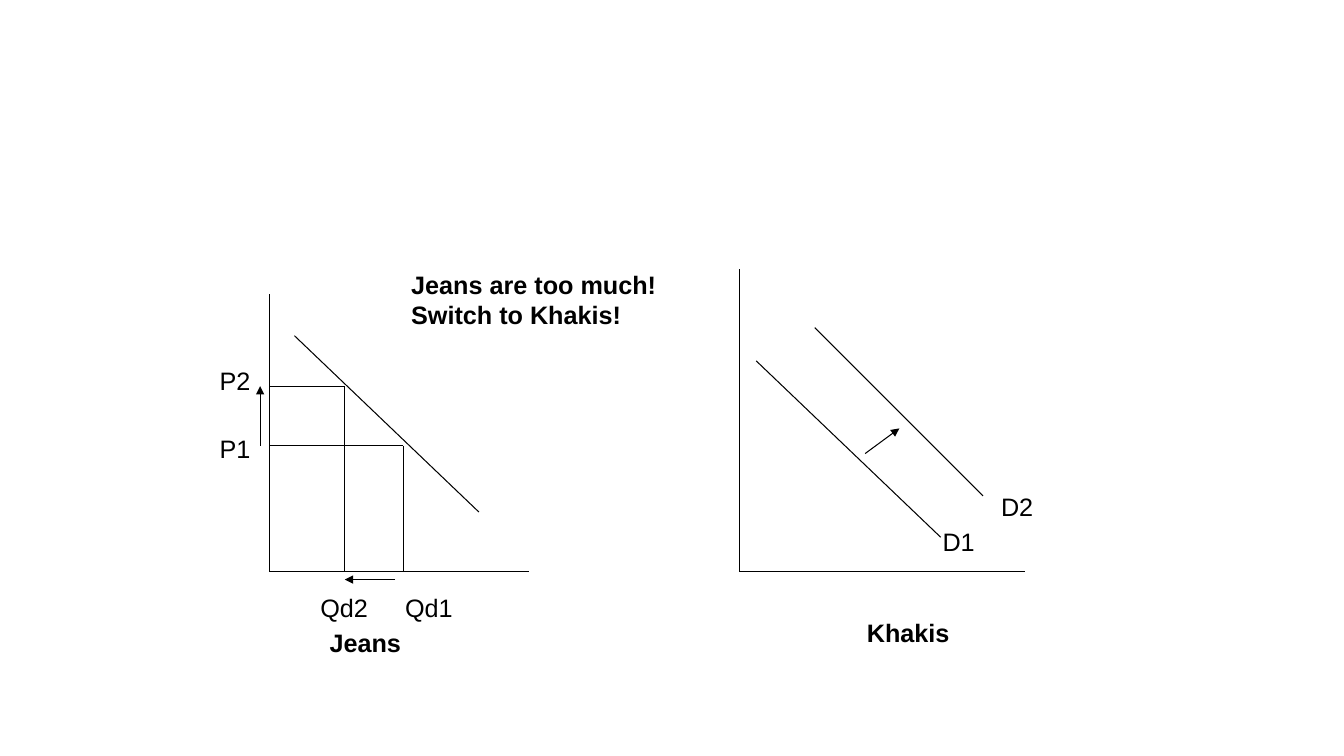
from dataclasses import dataclass

from lxml.etree import SubElement
from pptx import Presentation
from pptx.dml.color import RGBColor
from pptx.enum.shapes import MSO_CONNECTOR as Connector
from pptx.enum.text import MSO_AUTO_SIZE as AutoSize
from pptx.oxml.ns import qn
from pptx.util import Inches, Pt


@dataclass(frozen=True)
class Theme:
    """Colours, type and line sizes of the slide."""
    ink: RGBColor = RGBColor(0, 0, 0)
    paper: RGBColor = RGBColor(255, 255, 255)
    font: str = "Arial"
    text_size: Pt = Pt(18)
    line_width: Pt = Pt(0.75)


@dataclass(frozen=True)
class Box:
    """A region of the slide, in inches."""
    left: float
    top: float
    width: float
    height: float


THEME = Theme()
LABEL_HEIGHT = 0.4


def add_line(slide, box, start, end, arrow=False):
    """Draw a straight line between two points measured from the box corner."""
    line = slide.shapes.add_connector(
        Connector.STRAIGHT,
        Inches(box.left + start[0]), Inches(box.top + start[1]),
        Inches(box.left + end[0]), Inches(box.top + end[1]))
    line.line.color.rgb = THEME.ink
    line.line.width = THEME.line_width
    if arrow:
        SubElement(line.line._get_or_add_ln(), qn("a:tailEnd"), type="triangle")
    SubElement(line._element.spPr, qn("a:effectLst"))


def add_text(slide, box, lines, bold=False, wrap=False):
    """Write one paragraph for each line of text in the box."""
    shape = slide.shapes.add_textbox(
        Inches(box.left), Inches(box.top), Inches(box.width), Inches(box.height))
    frame = shape.text_frame
    frame.text = "\n".join(lines)
    frame.word_wrap = wrap
    frame.auto_size = AutoSize.SHAPE_TO_FIT_TEXT
    for paragraph in frame.paragraphs:
        paragraph.font.name = THEME.font
        paragraph.font.size = THEME.text_size
        paragraph.font.bold = bold
        paragraph.font.color.rgb = THEME.ink


def add_labels(slide, box, labels):
    """Place short labels given as text, offset from the box corner and width."""
    for text, x, y, width in labels:
        add_text(slide, Box(box.left + x, box.top + y, width, LABEL_HEIGHT), [text])


def add_axes(slide, box):
    """Draw the price and quantity axes along the left and bottom of the box."""
    origin = (0, box.height)
    add_line(slide, box, (0, 0), origin)
    add_line(slide, box, origin, (box.width, box.height))


def add_jeans_graph(slide, box):
    """Draw the movement along the jeans demand curve."""
    add_axes(slide, box)
    add_line(slide, box, (0.25, 0.41), (2.08, 2.16))
    quantity_1, price_1 = 1.33, 1.5
    quantity_2, price_2 = 0.75, 0.91
    for quantity, price in ((quantity_2, price_2), (quantity_1, price_1)):
        add_line(slide, box, (0, price), (quantity, price))
        add_line(slide, box, (quantity, price), (quantity, box.height))
    arrow_y = box.height + 0.08
    add_line(slide, box, (quantity_1 - 0.08, arrow_y), (quantity_2, arrow_y), arrow=True)
    add_line(slide, box, (-0.09, price_1), (-0.09, price_2), arrow=True)
    quantity_label_y = box.height + 0.16
    add_labels(slide, box, (
        ("Qd1", 1.25, quantity_label_y, 0.67),
        ("Qd2", 0.41, quantity_label_y, 0.67),
        ("P1", -0.59, 1.33, 0.51),
        ("P2", -0.59, 0.66, 0.51)))
    name_box = Box(box.left + 0.5, box.top + box.height + 0.5, 0.92, LABEL_HEIGHT)
    add_text(slide, name_box, ["Jeans"], bold=True, wrap=True)


def add_khakis_graph(slide, box):
    """Draw the shift of the khakis demand curve."""
    add_axes(slide, box)
    add_line(slide, box, (0.17, 0.91), (2, 2.66))
    add_line(slide, box, (0.75, 0.58), (2.42, 2.25))
    add_line(slide, box, (1.25, 1.83), (1.59, 1.58), arrow=True)
    add_labels(slide, box, (("D1", 1.92, 2.5, 0.52), ("D2", 2.5, 2.16, 0.52)))
    name_box = Box(box.left + 1.17, box.top + box.height + 0.41, 1.03, LABEL_HEIGHT)
    add_text(slide, name_box, ["Khakis"], bold=True)


def main():
    """Build and save the slide."""
    presentation = Presentation()
    presentation.slide_width = Inches(13.33)
    presentation.slide_height = Inches(7.5)
    slide = presentation.slides.add_slide(presentation.slide_layouts[6])
    slide.background.fill.solid()
    slide.background.fill.fore_color.rgb = THEME.paper
    add_jeans_graph(slide, Box(2.67, 2.92, 2.58, 2.75))
    add_khakis_graph(slide, Box(7.33, 2.67, 2.84, 3))
    add_text(slide, Box(3.98, 2.62, 2.66, 0.71),
             ["Jeans are too much!", "Switch to Khakis!"], bold=True)
    presentation.save("out.pptx")


if __name__ == "__main__":
    main()
